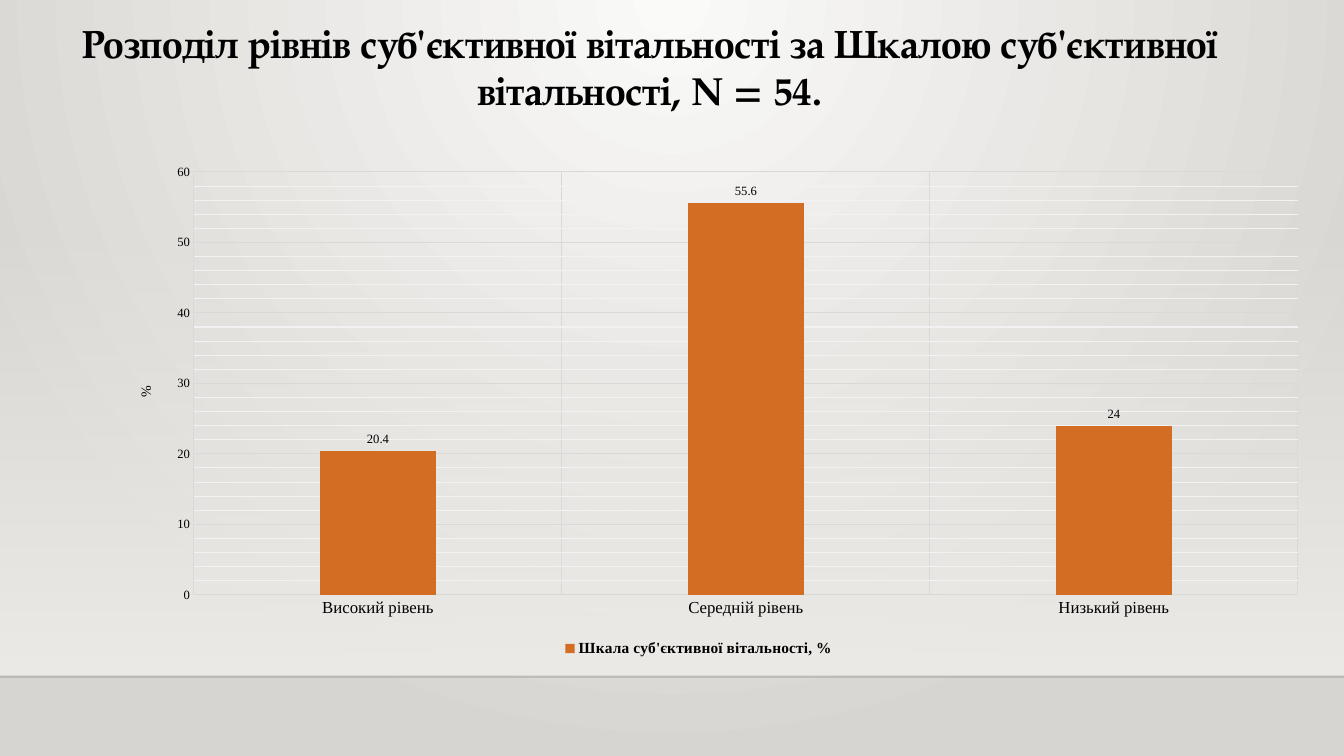
from lxml import etree
from pptx import Presentation
from pptx.chart.data import CategoryChartData
from pptx.dml.color import RGBColor
from pptx.enum.chart import XL_CHART_TYPE, XL_LABEL_POSITION, XL_LEGEND_POSITION, XL_TICK_MARK
from pptx.enum.shapes import MSO_CONNECTOR, MSO_SHAPE
from pptx.enum.text import PP_ALIGN
from pptx.oxml import parse_xml
from pptx.oxml.ns import nsdecls, qn
from pptx.util import Pt

COLUMNS = XL_CHART_TYPE.COLUMN_CLUSTERED
OUTSIDE_END = XL_LABEL_POSITION.OUTSIDE_END
BOTTOM = XL_LEGEND_POSITION.BOTTOM
NO_TICK = XL_TICK_MARK.NONE
STRAIGHT = MSO_CONNECTOR.STRAIGHT
RECTANGLE = MSO_SHAPE.RECTANGLE
CENTER = PP_ALIGN.CENTER

SCALE = 914400 / 100.8
PAGE_WIDTH, PAGE_HEIGHT = 1344, 756
TITLE_FONT = "TeX Gyre Pagella"
CHART_FONT = "Times New Roman"
COLORS = {
    "text": "000000",
    "page_light": "FAFAF9",
    "page_dark": "D7D5D2",
    "wall": "EDEBE7",
    "edge": "000001",
    "grid": "D9D9D9",
    "minor_grid": "F2F2F2",
    "column": "D26D23",
}

TITLE = "Розподіл рівнів суб'єктивної вітальності за Шкалою суб'єктивної вітальності, N = 54."
SERIES = "Шкала суб'єктивної вітальності, %"
LEVELS = {"Високий рівень": 20.4, "Середній рівень": 55.6, "Низький рівень": 24}


def px(length):
    return round(length * SCALE)


def color(name):
    return RGBColor.from_string(COLORS[name])


def style_font(font, name, size, bold=False):
    font.name = name
    font.size = Pt(size)
    font.bold = bold
    font.color.rgb = color("text")


def style_line(line, name, width=0.75):
    line.color.rgb = color(name)
    line.width = Pt(width)


def set_gradient(owner, stops, direction):
    """Replace the solid fill inside owner; stops are (position, colour, opacity) in percent."""
    stop_xml = "".join(
        f'<a:gs pos="{position * 1000}"><a:srgbClr val="{COLORS[name]}">'
        f'<a:alpha val="{opacity * 1000}"/></a:srgbClr></a:gs>'
        for position, name, opacity in stops)
    gradient = parse_xml(f'<a:gradFill {nsdecls("a")} rotWithShape="1">'
                         f'<a:gsLst>{stop_xml}</a:gsLst>{direction}</a:gradFill>')
    solid = owner.find(".//" + qn("a:solidFill"))
    solid.getparent().replace(solid, gradient)


def chart_layout(**settings):
    parts = "".join(f'<c:{key} val="{value}"/>' for key, value in settings.items())
    return parse_xml(f'<c:layout {nsdecls("c")}><c:manualLayout>{parts}'
                     '</c:manualLayout></c:layout>')


def replace_layout(parent, layout, index):
    for previous in parent.findall(qn("c:layout")):
        parent.remove(previous)
    parent.insert(index, layout)


def add_backdrop(page, left, top, width, height):
    # Page glow from the top centre
    page.background.fill.solid()
    set_gradient(page.background._cSld, [(0, "page_light", 100), (100, "page_dark", 100)],
                 '<a:path path="circle">'
                 '<a:fillToRect l="43000" t="0" r="43000" b="100000"/></a:path>')

    # Wall fading in downwards
    wall = page.shapes.add_shape(RECTANGLE, px(left), px(top), px(width), px(height))
    wall.shadow.inherit = False
    wall.line.fill.background()
    wall.fill.solid()
    set_gradient(wall._element.spPr, [(0, "wall", 0), (100, "wall", 100)],
                 '<a:lin ang="5400000" scaled="0"/>')

    # Floor edge
    edge_y = px(top + height + 2)
    edge = page.shapes.add_connector(STRAIGHT, px(left), edge_y, px(left + width), edge_y)
    style_line(edge.line, "edge", 1)
    properties = edge._element.spPr
    shade = properties.find(".//" + qn("a:srgbClr"))
    etree.SubElement(shade, qn("a:alpha")).set("val", "20000")
    etree.SubElement(properties, qn("a:effectLst"))


def style_axes(chart, width, height):
    levels = chart.category_axis
    levels.major_tick_mark = levels.minor_tick_mark = NO_TICK
    levels.has_major_gridlines = True
    style_line(levels.major_gridlines.format.line, "grid")
    style_line(levels.format.line, "grid")
    style_font(levels.tick_labels.font, CHART_FONT, 12)

    percent = chart.value_axis
    percent.minimum_scale, percent.maximum_scale = 0, 60
    percent.major_unit, percent.minor_unit = 10, 2
    percent.major_tick_mark = percent.minor_tick_mark = NO_TICK
    percent.has_major_gridlines = percent.has_minor_gridlines = True
    style_line(percent.major_gridlines.format.line, "grid")
    percent._element.find(qn("c:minorGridlines")).append(parse_xml(
        f'<c:spPr {nsdecls("c", "a")}><a:ln w="{Pt(0.75)}"><a:solidFill>'
        f'<a:srgbClr val="{COLORS["minor_grid"]}"/></a:solidFill></a:ln></c:spPr>'))
    percent.format.line.fill.background()
    style_font(percent.tick_labels.font, CHART_FONT, 9)

    # Upright axis title
    frame = percent.axis_title.text_frame
    span = frame.paragraphs[0].add_run()
    span.text = "%"
    style_font(span.font, CHART_FONT, 10)
    body = frame._txBody.bodyPr
    body.set("rot", "-5400000")
    body.set("vert", "horz")
    replace_layout(percent.axis_title._element,
                   chart_layout(xMode="edge", yMode="edge", x=58 / width, y=309 / height), 1)


def add_level_chart(page, left, top, width, height):
    data = CategoryChartData()
    data.categories = list(LEVELS)
    data.add_series(SERIES, list(LEVELS.values()))
    chart = page.shapes.add_chart(COLUMNS, px(left), px(top), px(width), px(height), data).chart
    chart.has_title = False
    style_font(chart.font, CHART_FONT, 10)
    style_axes(chart, width, height)
    replace_layout(chart._chartSpace.chart.plotArea,
                   chart_layout(layoutTarget="inner", xMode="edge", yMode="edge",
                                x=118 / width, y=97 / height,
                                w=1104 / width, h=423 / height), 0)

    # Columns and their values
    plot = chart.plots[0]
    plot.vary_by_categories = False
    plot.gap_width, plot.overlap = 219, -27
    columns = plot.series[0]
    columns.format.fill.solid()
    columns.format.fill.fore_color.rgb = color("column")
    labels = columns.data_labels
    labels.show_value = True
    labels.position = OUTSIDE_END
    style_font(labels.font, CHART_FONT, 9)

    # Legend
    chart.has_legend = True
    chart.legend.position = BOTTOM
    chart.legend.include_in_layout = False
    style_font(chart.legend.font, CHART_FONT, 11, bold=True)


def add_title(page, left, top, width, height):
    box = page.shapes.add_textbox(px(left), px(top), px(width), px(height))
    box.text_frame.word_wrap = True
    para = box.text_frame.paragraphs[0]
    para.alignment = CENTER
    span = para.add_run()
    span.text = TITLE
    style_font(span.font, TITLE_FONT, 28, bold=True)


def main():
    deck = Presentation()
    deck.slide_width, deck.slide_height = px(PAGE_WIDTH), px(PAGE_HEIGHT)
    page = deck.slides.add_slide(deck.slide_layouts[6])
    add_backdrop(page, 0, 222, PAGE_WIDTH, 453)
    add_level_chart(page, 76, 75, 1246, 586)
    add_title(page, 22, 14, 1256, 105)
    deck.save("out.pptx")


if __name__ == "__main__":
    main()
